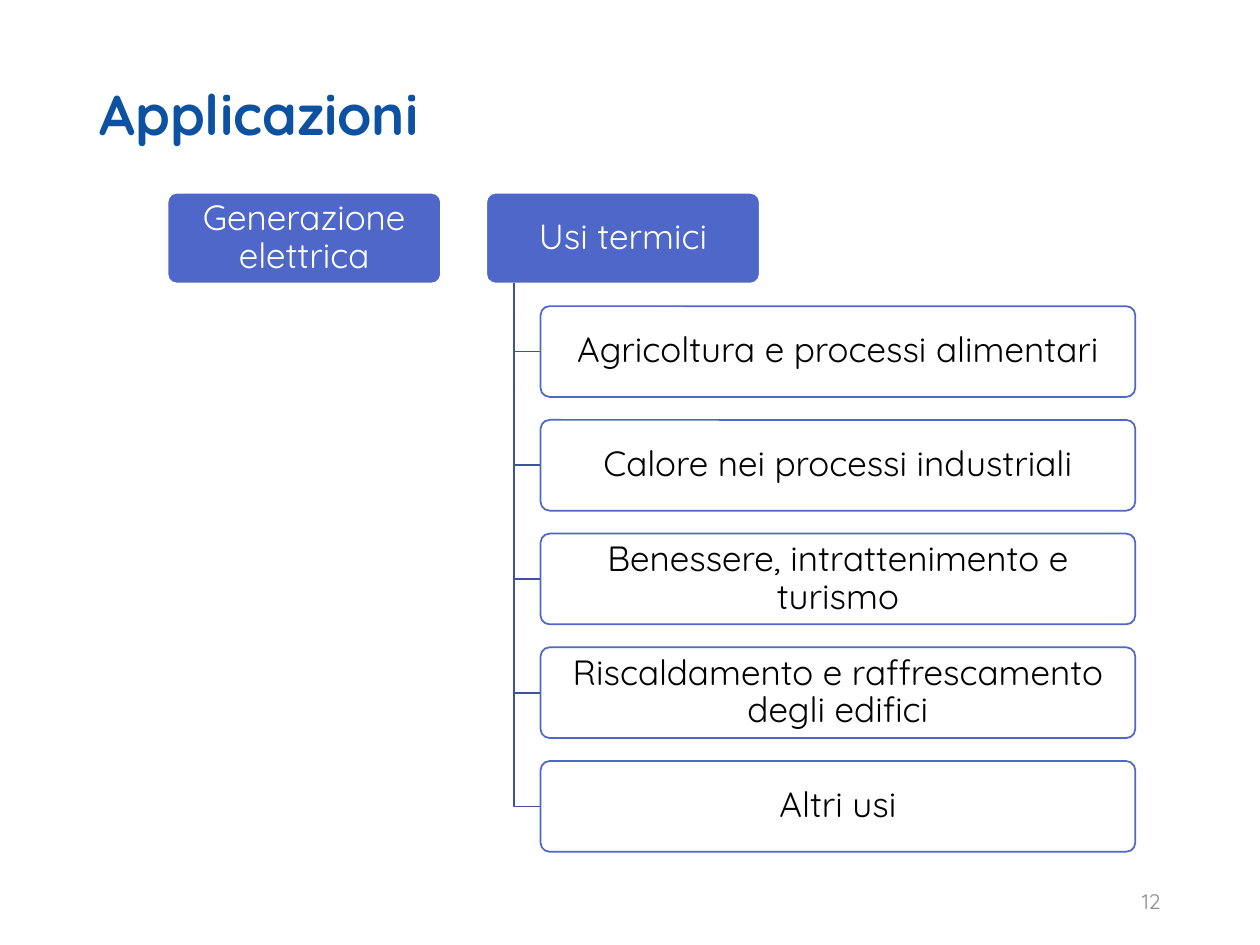
import pptx
import pptx.dml.color
import pptx.enum.shapes
import pptx.enum.text
import pptx.util

Inches, Pt = pptx.util.Inches, pptx.util.Pt
RGBColor = pptx.dml.color.RGBColor
ALIGN = pptx.enum.text.PP_ALIGN

TITLE = "Applicazioni"
PAGE = "12"
CATEGORIES = ["Generazione elettrica", "Usi termici"]
THERMAL_USES = [
    "Agricoltura e processi alimentari",
    "Calore nei processi industriali",
    "Benessere, intrattenimento e turismo",
    "Riscaldamento e raffrescamento degli edifici",
    "Altri usi",
]

FONT = "Quicksand"
NAVY = RGBColor(0x0D, 0x52, 0xA0)
BLUE = RGBColor(0x4E, 0x67, 0xC8)
DARK_BLUE = RGBColor(0x3E, 0x52, 0xA0)
GREY = RGBColor(0x8C, 0x8C, 0x8C)
WHITE = RGBColor(0xFF, 0xFF, 0xFF)
BLACK = RGBColor(0, 0, 0)

BOX_H = 0.72
CATEGORY_LEFT, CATEGORY_TOP, CATEGORY_W, CATEGORY_STEP = 1.33, 1.53, 2.17, 2.53
USE_LEFT, USE_W = 4.29, 4.72
FIRST_USE_TOP, LAST_USE_TOP = 2.43, 6.04
TRUNK_X = 4.08


def write(sp, text, size, color, align, bold=False, spacing=0.9):
    tf = sp.text_frame
    tf.word_wrap = True
    tf.vertical_anchor = pptx.enum.text.MSO_ANCHOR.MIDDLE
    tf.text = text
    p = tf.paragraphs[0]
    p.alignment = align
    p.line_spacing = spacing
    font = p.runs[0].font
    font.name, font.size, font.bold = FONT, Pt(size), bold
    font.color.rgb = color


def add_label(slide, box, *style, **options):
    write(slide.shapes.add_textbox(*map(Inches, box)), *style, **options)


def add_box(slide, left, top, width, text, fill, line, color):
    sp = slide.shapes.add_shape(
        pptx.enum.shapes.MSO_SHAPE.ROUNDED_RECTANGLE,
        Inches(left), Inches(top), Inches(width), Inches(BOX_H))
    sp.shadow.inherit = False
    sp.adjustments[0] = 0.1
    sp.fill.solid()
    sp.fill.fore_color.rgb = fill
    sp.line.color.rgb = line
    sp.line.width = Pt(1)
    tf = sp.text_frame
    tf.margin_left = tf.margin_right = Inches(0.06)
    tf.margin_top = tf.margin_bottom = Inches(0.05)
    write(sp, text, 20, color, ALIGN.CENTER)


def add_branch(slide, middle):
    """Draw the elbow from the thermal category down to one use."""
    x, y = Inches(TRUNK_X), Inches(middle)
    builder = slide.shapes.build_freeform(x, Inches(CATEGORY_TOP + BOX_H))
    builder.add_line_segments([(x, y), (Inches(USE_LEFT), y)], close=False)
    sp = builder.convert_to_shape()
    sp.shadow.inherit = False
    sp.fill.background()
    sp.line.color.rgb = DARK_BLUE
    sp.line.width = Pt(1)


def main():
    prs = pptx.Presentation()
    prs.slide_width, prs.slide_height = Inches(10), Inches(7.5)
    slide = prs.slides.add_slide(prs.slide_layouts[6])

    add_label(slide, (0.69, 0.4, 7.95, 1.06), TITLE, 32, NAVY, ALIGN.LEFT, bold=True)
    add_label(slide, (7.06, 6.95, 2.25, 0.4), PAGE, 12, GREY, ALIGN.RIGHT, spacing=1.0)

    for i, text in enumerate(CATEGORIES):
        add_box(slide, CATEGORY_LEFT + i * CATEGORY_STEP, CATEGORY_TOP, CATEGORY_W,
                text, BLUE, WHITE, WHITE)

    step = (LAST_USE_TOP - FIRST_USE_TOP) / (len(THERMAL_USES) - 1)
    for i, text in enumerate(THERMAL_USES):
        top = FIRST_USE_TOP + i * step
        add_branch(slide, top + BOX_H / 2)
        add_box(slide, USE_LEFT, top, USE_W, text, WHITE, BLUE, BLACK)

    prs.save("out.pptx")


if __name__ == "__main__":
    main()
